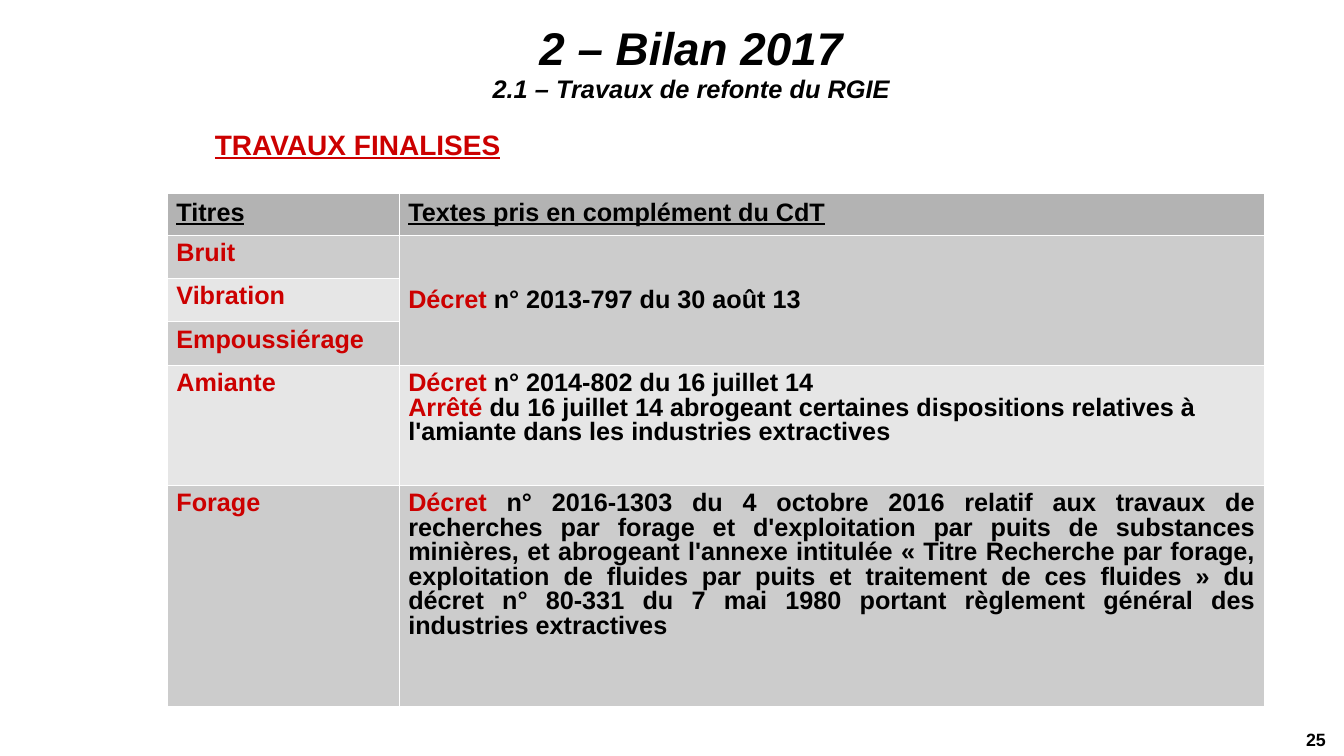
"""Build the slide on the finished RGIE revision work."""
import lxml.etree
import pptx
import pptx.dml.color
import pptx.enum.text
import pptx.oxml.ns
import pptx.util

Inches, Pt = pptx.util.Inches, pptx.util.Pt
ALIGN, ANCHOR = pptx.enum.text.PP_ALIGN, pptx.enum.text.MSO_ANCHOR
qn = pptx.oxml.ns.qn
BLACK, RED, WHITE = "000000", "CC0000", "FFFFFF"
DARK, MID, LIGHT = "B3B3B3", "CCCCCC", "E6E6E6"


def rgb(value):
    return pptx.dml.color.RGBColor.from_string(value)


def add_text(p, text, size=18, color=BLACK, underline=False, italic=False):
    r = p.add_run()
    r.text = text
    font = r.font
    font.name, font.size, font.bold = "Arial", Pt(size), True
    font.underline, font.italic = underline, italic
    font.color.rgb = rgb(color)


class Deck:
    def __init__(self):
        self.prs = pptx.Presentation()
        self.prs.slide_width, self.prs.slide_height = Inches(13.33), Inches(7.5)
        self.slide = self.prs.slides.add_slide(self.prs.slide_layouts[5])

    def title(self, box, heading, subheading):
        sp = self.slide.shapes.title
        sp.left, sp.top, sp.width, sp.height = map(Inches, box)
        tf = sp.text_frame
        tf.auto_size = pptx.enum.text.MSO_AUTO_SIZE.NONE
        tf.vertical_anchor = ANCHOR.MIDDLE
        tf.margin_left = tf.margin_right = tf.margin_bottom = 0
        tf.margin_top = Inches(0.03)
        p = tf.paragraphs[0]
        p.alignment, p.line_spacing = ALIGN.CENTER, 0.93
        add_text(p, heading, size=32.7, italic=True)
        p.add_line_break()
        lxml.etree.SubElement(p._p[-1], qn("a:rPr"), sz="3270")
        add_text(p, subheading, size=18.1, italic=True)

    def label(self, box, text, align=ALIGN.LEFT, margins=(0, 0), **style):
        tf = self.slide.shapes.add_textbox(*map(Inches, box)).text_frame
        tf.word_wrap = True
        tf.margin_left = tf.margin_right = Inches(margins[0])
        tf.margin_top = tf.margin_bottom = Inches(margins[1])
        tf.paragraphs[0].alignment = align
        add_text(tf.paragraphs[0], text, **style)

    def table(self, box, widths, heights):
        table = self.slide.shapes.add_table(
            len(heights), len(widths), *map(Inches, box)).table
        for column, width in zip(table.columns, widths):
            column.width = Inches(width)
        for row, height in zip(table.rows, heights):
            row.height = Inches(height)
        return table

    def cell(self, cell, paragraphs, fill, align=ALIGN.LEFT, top=0.07, **style):
        tc_pr = cell._tc.get_or_add_tcPr()
        for side in "LRTB":
            ln = lxml.etree.SubElement(tc_pr, qn(f"a:ln{side}"), w="762")
            solid = lxml.etree.SubElement(ln, qn("a:solidFill"))
            lxml.etree.SubElement(solid, qn("a:srgbClr"), val=WHITE)
        cell.fill.solid()
        cell.fill.fore_color.rgb = rgb(fill)
        cell.margin_left = cell.margin_right = Inches(0.09)
        cell.margin_top, cell.margin_bottom = Inches(top), Inches(0.05)
        tf = cell.text_frame
        for i, runs in enumerate(paragraphs):
            p = tf.add_paragraph() if i else tf.paragraphs[0]
            p.alignment, p.line_spacing = align, 0.87
            for text, color in runs:
                add_text(p, text, color=color, **style)


def main():
    deck = Deck()
    deck.title((2.58, 0.18, 8.55, 0.89),
               "2 – Bilan 2017", "2.1 – Travaux de refonte du RGIE")
    deck.label((2.04, 1.22, 3.26, 0.42), "TRAVAUX FINALISES",
               margins=(0.09, 0.04), size=20, color=RED, underline=True)
    deck.label((11.92, 7.23, 1.23, 0.27), "25", align=ALIGN.RIGHT, size=12.7)

    table = deck.table((1.66, 1.92, 10.88, 5.07), (2.3, 8.58),
                       (0.41, 0.43, 0.43, 0.43, 1.19, 2.2))
    for col, heading in enumerate(("Titres", "Textes pris en complément du CdT")):
        deck.cell(table.cell(0, col), [[(heading, BLACK)]], DARK,
                  top=0.08, underline=True)

    noise = [[("Décret ", RED), ("n° 2013-797 du 30 août 13", BLACK)]]
    asbestos = [
        [("Décret", RED), (" n° 2014-802 du 16 juillet 14", BLACK)],
        [("Arrêté", RED),
         (" du 16 juillet 14 abrogeant certaines dispositions relatives à "
          "l'amiante dans les industries extractives", BLACK)],
    ]
    drilling = [[
        ("Décret", RED),
        (" n° 2016-1303 du 4 octobre 2016 relatif aux travaux de recherches "
         "par forage et d'exploitation par puits de substances minières, et "
         "abrogeant l'annexe intitulée « Titre Recherche par forage, "
         "exploitation de fluides par puits et traitement de ces fluides » du "
         "décret n° 80-331 du 7 mai 1980 portant règlement général des "
         "industries extractives", BLACK),
    ]]
    rows = [("Bruit", noise, ALIGN.LEFT), ("Vibration", [], ALIGN.LEFT),
            ("Empoussiérage", [], ALIGN.LEFT), ("Amiante", asbestos, ALIGN.LEFT),
            ("Forage", drilling, ALIGN.JUSTIFY)]
    for row, (name, texts, align) in enumerate(rows, 1):
        fill = MID if row % 2 else LIGHT
        deck.cell(table.cell(row, 0), [[(name, RED)]], fill)
        deck.cell(table.cell(row, 1), texts, fill, align=align)
    table.cell(1, 1).merge(table.cell(3, 1))
    table.cell(1, 1).vertical_anchor = ANCHOR.MIDDLE

    deck.prs.save("out.pptx")


if __name__ == "__main__":
    main()
